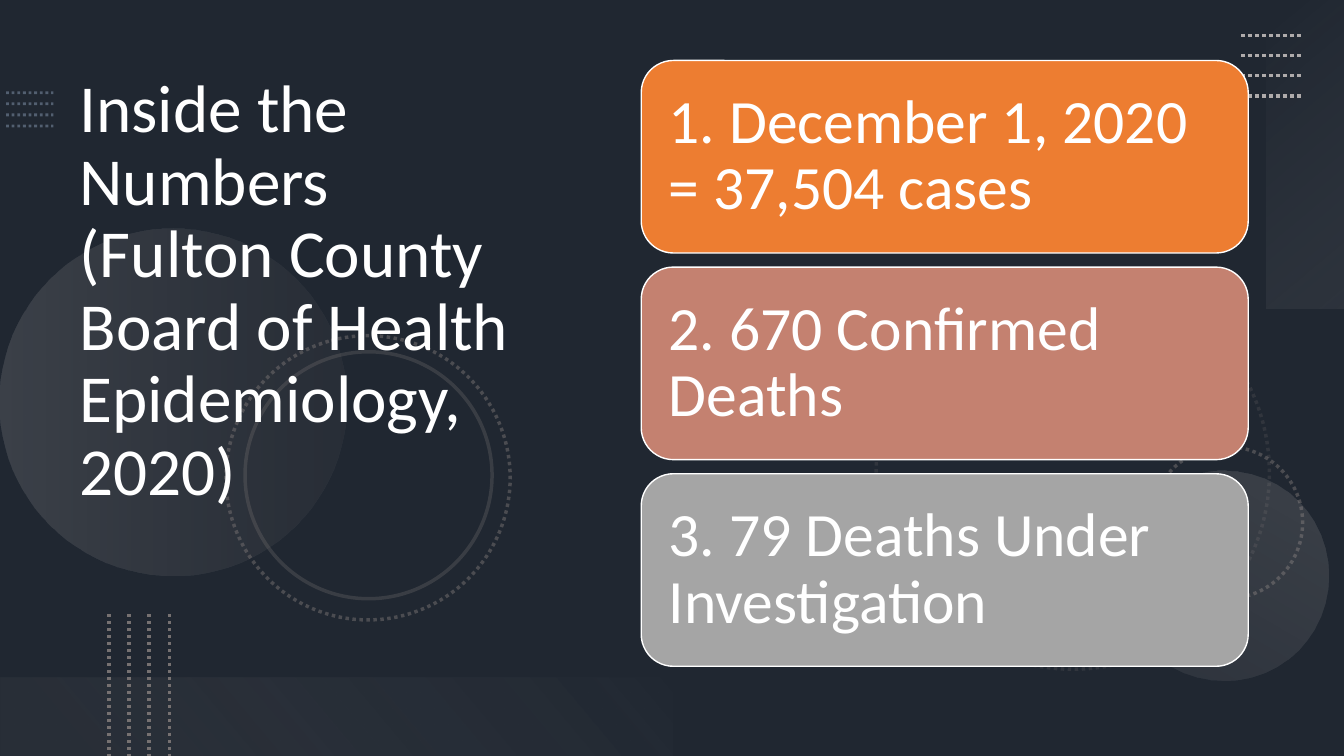
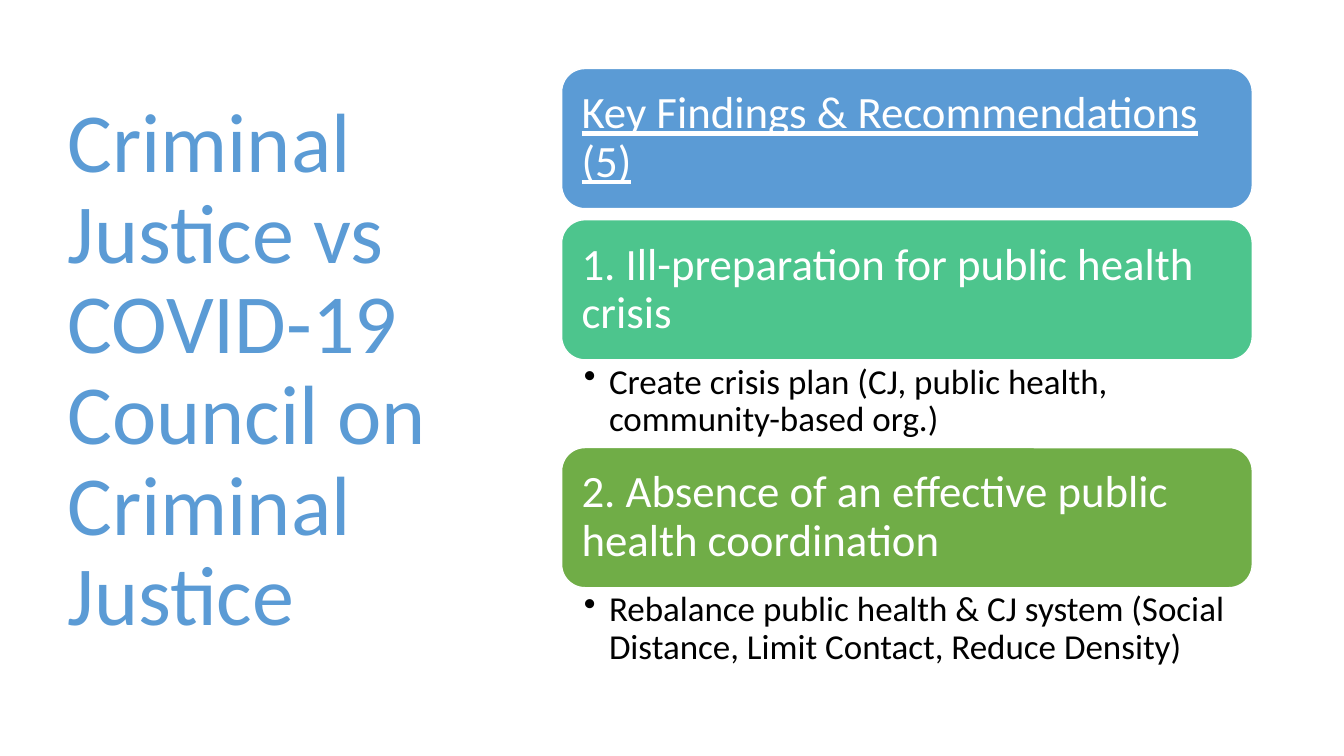
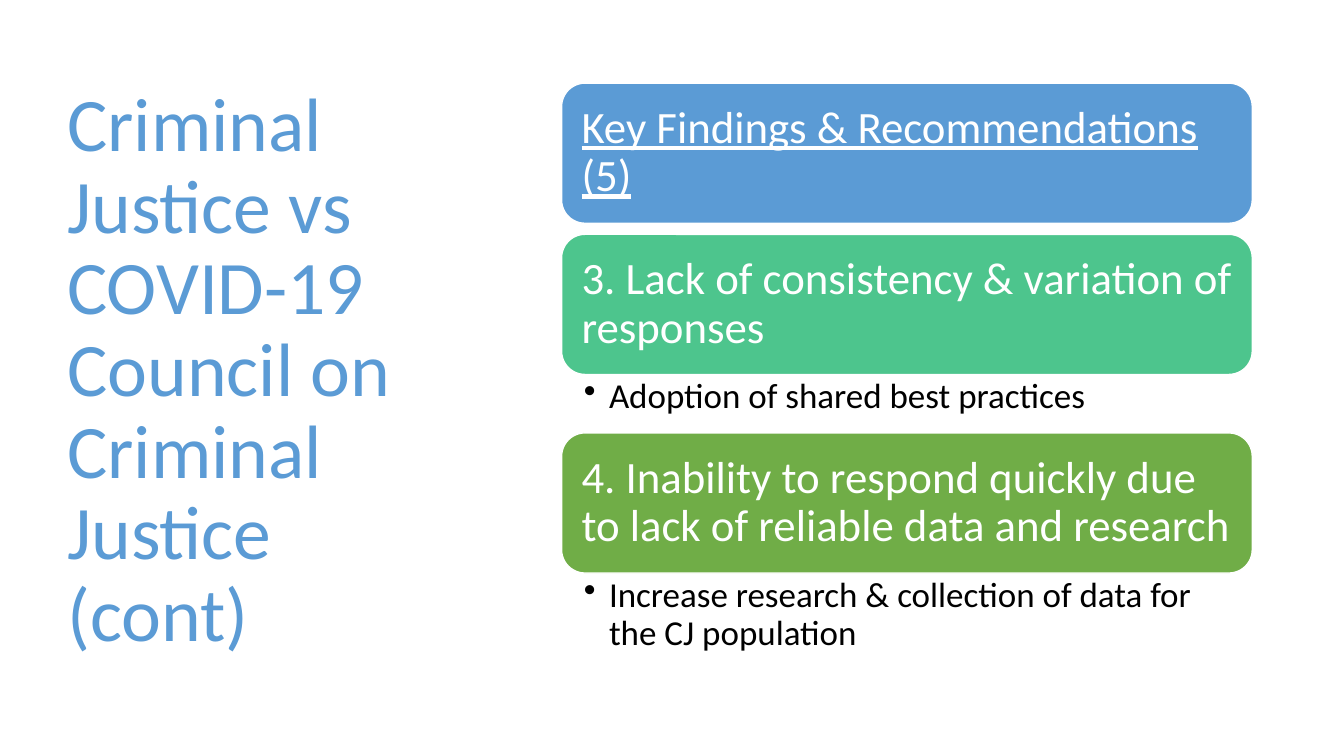
from pptx import Presentation
from pptx.dml.color import RGBColor
from pptx.enum import dml, shapes, text
from pptx.oxml import ns, xmlchemy
from pptx.util import Inches, Pt

COLORS = {
    "white": "FFFFFF", "black": "000000", "slate": "44546A", "steel": "8497B0",
    "gray": "767171", "silver": "AFABAB", "mist": "F5F5F5", "ash": "A5A5A5",
    "orange": "ED7D31", "clay": "C48170", "blue": "5B9BD5",
    "mint": "4DC58D", "green": "70AD47",
}
FONT = "Calibri"
RECT = shapes.MSO_SHAPE.RECTANGLE
ROUNDED = shapes.MSO_SHAPE.ROUNDED_RECTANGLE
OVAL = shapes.MSO_SHAPE.OVAL


def color(name):
    return RGBColor.from_string(COLORS[name])


def set_alphas(element, *percents):
    """Give each colour inside the element its opacity."""
    for value, percent in zip(element.iter(ns.qn("a:srgbClr")), percents):
        alpha = xmlchemy.OxmlElement("a:alpha")
        alpha.set("val", str(percent * 1000))
        value.append(alpha)


class Slides:
    def __init__(self):
        self.deck = Presentation()
        self.deck.slide_width = Inches(13.33)
        self.deck.slide_height = Inches(7.5)
        self.page = None

    def new_page(self, background="white"):
        self.page = self.deck.slides.add_slide(self.deck.slide_layouts[6])
        self.page.background.fill.solid()
        self.page.background.fill.fore_color.rgb = color(background)

    def stroke(self, line, name, width, dotted=False):
        line.color.rgb = color(name)
        line.width = Pt(width)
        if dotted:
            line.dash_style = dml.MSO_LINE.ROUND_DOT

    def shape(self, kind, at, fill=None, opacity=100, rotation=0):
        shape = self.page.shapes.add_shape(kind, *map(Inches, at))
        shape.shadow.inherit = False
        shape.rotation = rotation
        shape.line.fill.background()
        if fill:
            shape.fill.solid()
            shape.fill.fore_color.rgb = color(fill)
            if opacity < 100:
                set_alphas(shape._element.spPr, opacity)
        else:
            shape.fill.background()
        return shape

    def faded(self, kind, at, rotation, angle, stops):
        """A shape with a gradient; stops are (position, colour, opacity)."""
        shape = self.shape(kind, at, rotation=rotation)
        shape.fill.gradient()
        shape.fill.gradient_angle = 360 - angle
        for stop, (position, name, _) in zip(shape.fill.gradient_stops, stops):
            stop.position = position
            stop.color.rgb = color(name)
        set_alphas(shape._element.spPr, *(opacity for _, _, opacity in stops))

    def ring(self, left, top, size, opacity, rotation=75, dotted=True):
        ring = self.shape(OVAL, (left, top, size, size), rotation=rotation)
        self.stroke(ring.line, "gray", 2.5, dotted)
        set_alphas(ring._element.spPr, opacity)

    def dotted_line(self, start, end, name, width=2.5, opacity=100):
        line = self.page.shapes.add_connector(
            shapes.MSO_CONNECTOR.STRAIGHT, *map(Inches, start + end))
        self.stroke(line.line, name, width, dotted=True)
        properties = line._element.spPr
        set_alphas(properties, opacity)
        properties.append(xmlchemy.OxmlElement("a:effectLst"))

    def set_text(self, box, words, size, name, insets, anchor):
        frame = box.text_frame
        frame.word_wrap = True
        frame.auto_size = text.MSO_AUTO_SIZE.NONE
        frame.vertical_anchor = anchor
        (frame.margin_left, frame.margin_top,
         frame.margin_right, frame.margin_bottom) = map(Inches, insets)
        para = frame.paragraphs[0]
        para.text = words
        para.alignment = text.PP_ALIGN.LEFT
        para.line_spacing = 0.9
        para.font.name = FONT
        para.font.size = Pt(size)
        para.font.color.rgb = color(name)
        return para

    def text_box(self, at, words, size, name, insets=(0.1, 0.05, 0.1, 0.05),
                 anchor=text.MSO_ANCHOR.TOP):
        box = self.page.shapes.add_textbox(*map(Inches, at))
        return self.set_text(box, words, size, name, insets, anchor)

    def card(self, at, words, size, fill, inset, underline=False):
        card = self.shape(ROUNDED, at, fill)
        self.stroke(card.line, "white", 1)
        para = self.set_text(card, words, size, "white", [inset] * 4,
                             text.MSO_ANCHOR.MIDDLE)
        if underline:
            para.font.underline = True

    def bullet(self, at, words):
        para = self.text_box(at, words, 25, "black", (0.22, 0.04, 0.25, 0.04))
        properties = para._p.get_or_add_pPr()
        properties.set("marL", str(Inches(0.25)))
        properties.set("indent", str(-Inches(0.25)))
        mark = xmlchemy.OxmlElement("a:buChar")
        mark.set("char", "•")
        properties.insert_element_before(mark, "a:tabLst", "a:defRPr", "a:extLst")

    def dark_backdrop(self):
        self.shape(RECT, (0, 0, 13.33, 7.5), "black", 53)
        for row in range(4):
            y = 0.92 + 0.11 * row
            self.dotted_line((0.06, y), (0.53, y), "steel", 2, 50)
        # Circles
        self.ring(8.69, 2.74, 3.9, 20)
        self.ring(11.41, 4.43, 1.51, 50, rotation=270)
        self.faded(OVAL, (0, 2.27, 3.44, 3.44), 270, 90,
                   [(0, "silver", 20), (1, "gray", 10)])
        self.faded(OVAL, (11.1, 4.67, 2.08, 2.08), 210, 90,
                   [(0, "silver", 10), (1, "silver", 20)])
        self.ring(2.24, 3.33, 2.82, 50)
        self.ring(2.43, 3.49, 2.45, 30, dotted=False)
        # Corner bands and dotted lines
        self.faded(RECT, (11.42, 1.14, 3.06, 0.78), 270, 140,
                   [(0, "mist", 0), (1, "silver", 10)])
        for row in range(4):
            y = 0.35 + 0.2 * row
            self.dotted_line((12.31, y), (12.91, y), "silver")
        self.faded(RECT, (0, 6.72, 6.67, 0.78), 180, 140,
                   [(0.1, "gray", 10), (1, "mist", 0)])
        for column in range(4):
            x = 1.08 + 0.2 * column
            self.dotted_line((x, 6.09), (x, 7.5), "gray")

    def findings(self, title, size, findings):
        """Title at left; at right a centred stack of cards with bullets.

        Findings are (card, bullet, number of bullet lines).
        """
        left, width, card_height, gap, middle = 5.57, 6.85, 1.39, 0.11, 3.69
        note_heights = {1: 0.58, 2: 0.87}
        self.new_page()
        self.text_box((0.57, 0.68, 4.16, 6.02), title, size, "blue",
                      anchor=text.MSO_ANCHOR.MIDDLE)
        total = (card_height * (len(findings) + 1) + gap
                 + sum(note_heights[lines] for _, _, lines in findings))
        top = middle - total / 2
        self.card((left, top, width, card_height),
                  "Key Findings & Recommendations (5)", 32, "blue", 0.13, True)
        top += card_height + gap
        for (finding, advice, lines), fill in zip(findings, ("mint", "green")):
            self.card((left, top, width, card_height), finding, 32, fill, 0.13)
            top += card_height
            self.bullet((left, top, width, note_heights[lines]), advice)
            top += note_heights[lines]


def main():
    slides = Slides()

    # Slide 1: numbers
    slides.new_page("slate")
    slides.dark_backdrop()
    slides.text_box(
        (0.69, 0.69, 5.41, 6.03),
        "Inside the Numbers\v(Fulton County Board of Health Epidemiology, 2020)",
        48, "white")
    numbers = [
        ("1. December 1, 2020 = 37,504 cases", "orange"),
        ("2. 670 Confirmed Deaths", "clay"),
        ("3. 79 Deaths Under Investigation", "ash"),
    ]
    height, gap = 1.91, 0.14
    for row, (words, fill) in enumerate(numbers):
        slides.card((6.36, 0.6 + row * (height + gap), 6.02, height),
                    words, 44, fill, 0.18)

    # Slides 2 and 3: findings
    title = "Criminal Justice vs COVID-19\vCouncil on Criminal Justice"
    slides.findings(title, 60, [
        ("1. Ill-preparation for public health crisis",
         "Create crisis plan (CJ, public health, community-based org.)", 2),
        ("2. Absence of an effective public health coordination",
         "Rebalance public health & CJ system "
         "(Social Distance, Limit Contact, Reduce Density)", 2),
    ])
    slides.findings(title + " (cont)", 54, [
        ("3. Lack of consistency & variation of responses",
         "Adoption of shared best practices", 1),
        ("4. Inability to respond quickly due to lack of reliable data and research",
         "Increase research & collection of data for the CJ population", 2),
    ])

    slides.deck.save("out.pptx")


if __name__ == "__main__":
    main()
